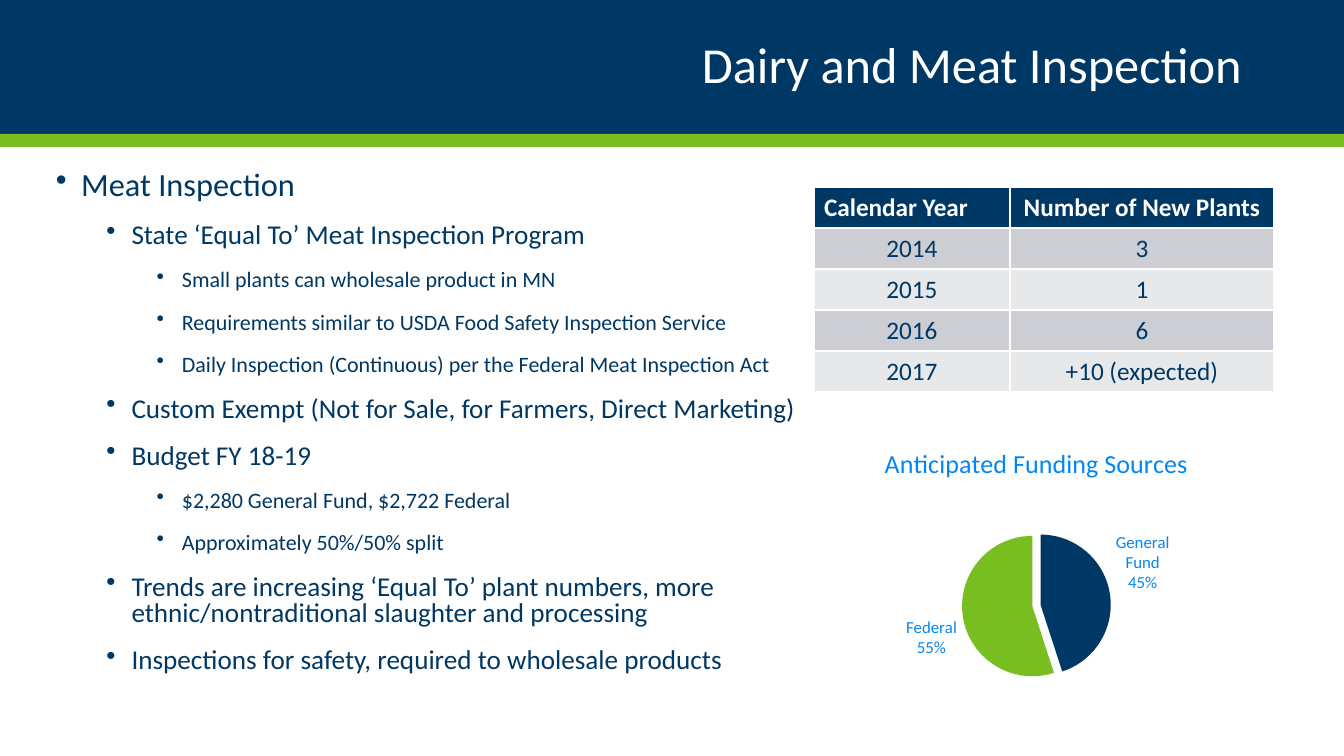
import pptx
import pptx.chart.data
import pptx.dml.color
import pptx.enum.chart
import pptx.enum.shapes
import pptx.enum.text
import pptx.util
from lxml import etree
from pptx.oxml import parse_xml
from pptx.oxml.ns import nsdecls, qn

RGB = pptx.dml.color.RGBColor
NAVY = RGB(0x00, 0x38, 0x65)
GREEN = RGB(0x78, 0xBE, 0x21)
BLUE = RGB(0x00, 0x87, 0xF4)
WHITE = RGB(0xFF, 0xFF, 0xFF)
BAND_DARK = RGB(0xCC, 0xCE, 0xD3)
BAND_LIGHT = RGB(0xE7, 0xE8, 0xEA)

Pt = pptx.util.Pt
ALIGN = pptx.enum.text.PP_ALIGN
ANCHOR = pptx.enum.text.MSO_ANCHOR


def px(*lengths):
    """Turn pixels (100.8 to the inch) into EMU."""
    return [round(length * 914400 / 100.8) for length in lengths]


def set_font(font, size, color, bold=False):
    font.name = "Calibri"
    font.size = Pt(size)
    font.color.rgb = color
    font.bold = bold


prs = pptx.Presentation()
prs.slide_width, prs.slide_height = px(1344, 756)
slide = prs.slides.add_slide(prs.slide_layouts[6])

# Header band
for top, height, color in [(0, 134, NAVY), (134, 13, GREEN)]:
    band = slide.shapes.add_shape(
        pptx.enum.shapes.MSO_SHAPE.RECTANGLE, *px(0, top, 1344, height))
    band.shadow.inherit = False
    band.fill.solid()
    band.fill.fore_color.rgb = color
    band.line.fill.background()

title = slide.shapes.add_textbox(*px(93, 17, 1159, 101)).text_frame
title.word_wrap = True
title.vertical_anchor = ANCHOR.MIDDLE
heading = title.paragraphs[0]
heading.text = "Dairy and Meat Inspection"
heading.alignment = ALIGN.RIGHT
heading.line_spacing = 0.9
set_font(heading.font, 36, WHITE)

# Outline: level and text
outline = [
    (0, "Meat Inspection"),
    (1, "State ‘Equal To’ Meat Inspection Program"),
    (2, "Small plants can wholesale product in MN"),
    (2, "Requirements similar to USDA Food Safety Inspection Service"),
    (2, "Daily Inspection (Continuous) per the Federal Meat Inspection Act"),
    (1, "Custom Exempt (Not for Sale, for Farmers, Direct Marketing)"),
    (1, "Budget FY 18-19"),
    (2, "$2,280 General Fund, $2,722 Federal"),
    (2, "Approximately 50%/50% split"),
    (1, "Trends are increasing ‘Equal To’ plant numbers, more "
        "ethnic/nontraditional slaughter and processing"),
    (1, "Inspections for safety, required to wholesale products"),
]
level_sizes = [23.1, 19.4, 15.7]
body = slide.shapes.add_textbox(*px(46, 167, 777, 539)).text_frame
body.word_wrap = True
for i, (level, text) in enumerate(outline):
    point = body.add_paragraph() if i else body.paragraphs[0]
    point.text = text
    point.level = level
    point.line_spacing = 0.8
    point.space_before = Pt(5 if level else 10)
    point.space_after = Pt(10)
    set_font(point.font, level_sizes[level], NAVY)
    hanging, = px(25.2)
    props = point._p.get_or_add_pPr()
    props.set("marL", str(hanging * (2 * level + 1)))
    props.set("indent", str(-hanging))
    bullet = parse_xml(f'<a:buChar {nsdecls("a")} char="•"/>')
    props.insert_element_before(bullet, "a:tabLst", "a:defRPr", "a:extLst")

# New plants by year
plants = [
    ("Calendar Year", "Number of New Plants"),
    ("2014", "3"),
    ("2015", "1"),
    ("2016", "6"),
    ("2017", "+10 (expected)"),
]
table = slide.shapes.add_table(5, 2, *px(814, 187, 460, 205)).table
table.columns[0].width, table.columns[1].width = px(196, 264)
for r, row in enumerate(plants):
    for c, text in enumerate(row):
        cell = table.cell(r, c)
        cell.fill.solid()
        cell.fill.fore_color.rgb = (
            NAVY if r == 0 else BAND_DARK if r % 2 else BAND_LIGHT)
        entry = cell.text_frame.paragraphs[0]
        entry.text = text
        entry.alignment = ALIGN.LEFT if r == c == 0 else ALIGN.CENTER
        set_font(entry.font, 18, NAVY if r else WHITE, bold=r == 0)

# Funding pie
funding = pptx.chart.data.CategoryChartData()
funding.categories = ["General Fund", "Federal"]
funding.add_series("Anticipated Funding Sources", [45, 55])
chart = slide.shapes.add_chart(
    pptx.enum.chart.XL_CHART_TYPE.PIE, *px(814, 430, 445, 270), funding).chart
set_font(chart.font, 10, NAVY)
chart.has_legend = False
chart.has_title = True
chart_title = chart.chart_title.text_frame.paragraphs[0]
chart_title.text = "Anticipated Funding Sources"
set_font(chart_title.font, 18.6, BLUE)

pie = chart.plots[0]
pie.vary_by_categories = True
sources = pie.series[0]
for i, color in enumerate([NAVY, GREEN]):
    fill = sources.points[i].format.fill
    fill.solid()
    fill.fore_color.rgb = color
for slice_props in sources._element.findall(qn("c:dPt")):
    explosion = etree.Element(qn("c:explosion"), val="6")
    slice_props.find(qn("c:spPr")).addprevious(explosion)

labels = sources.data_labels
labels.show_category_name = True
labels.show_percentage = True
labels.show_value = False
labels.number_format = "0%"
labels.number_format_is_linked = False
labels.position = pptx.enum.chart.XL_LABEL_POSITION.OUTSIDE_END
set_font(labels.font, 12, BLUE)
separator = etree.Element(qn("c:separator"))
separator.text = "\n"
labels._element.find(qn("c:showBubbleSize")).addnext(separator)

plot_area = chart._chartSpace.chart.plotArea
for old_layout in plot_area.findall(qn("c:layout")):
    plot_area.remove(old_layout)
plot_area.insert(0, parse_xml(
    f'<c:layout {nsdecls("c")}><c:manualLayout><c:layoutTarget val="inner"/>'
    '<c:xMode val="edge"/><c:yMode val="edge"/><c:x val="0.34"/>'
    '<c:y val="0.39"/><c:w val="0.32"/><c:h val="0.52"/>'
    '</c:manualLayout></c:layout>'))

prs.save("out.pptx")
